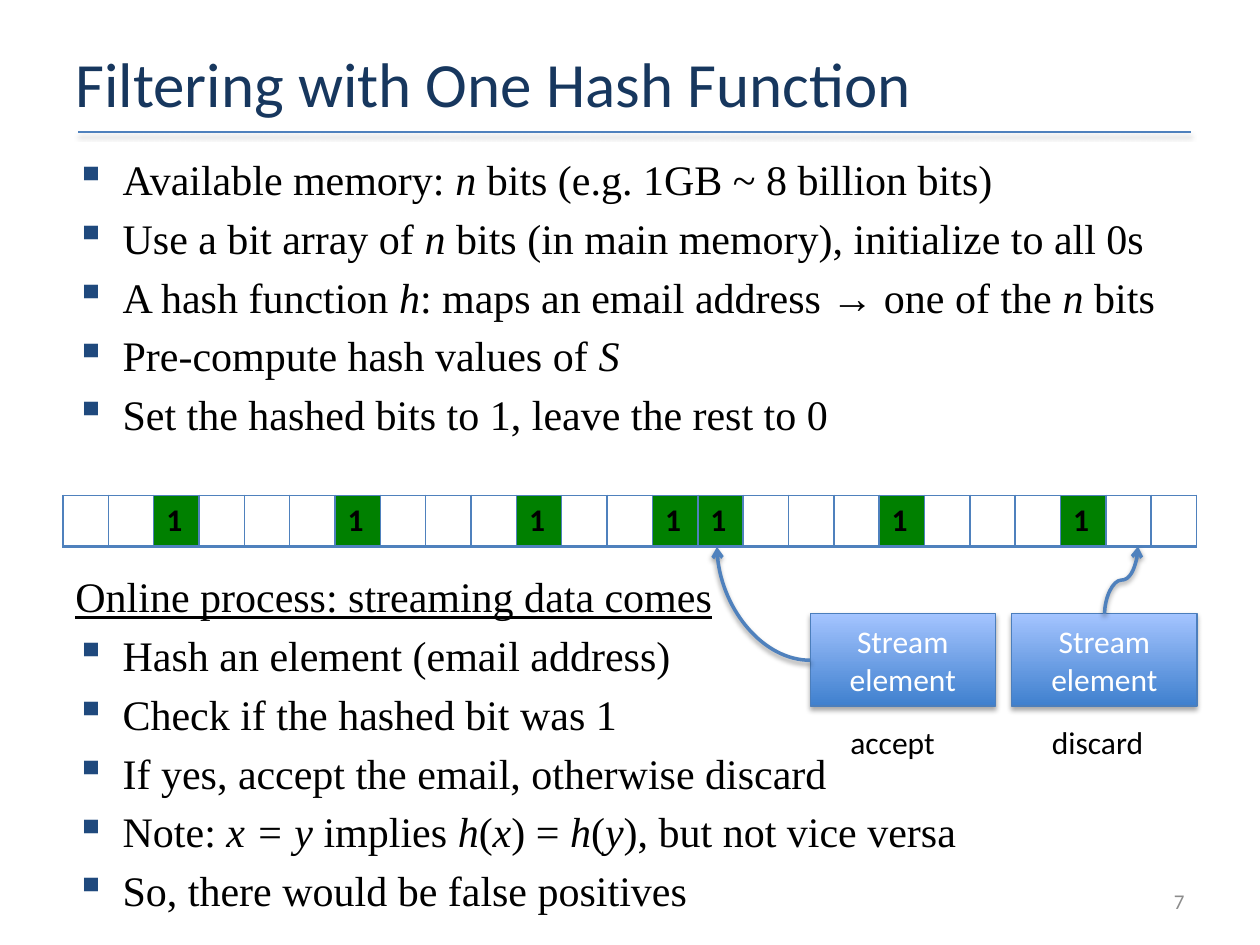
import pptx
import pptx.util
import pptx.dml.color
import pptx.enum.shapes
import pptx.enum.text
import pptx.oxml
import pptx.oxml.ns
import lxml.etree

Pt = pptx.util.Pt
qn = pptx.oxml.ns.qn
ALIGN = pptx.enum.text.PP_ALIGN
ANCHOR = pptx.enum.text.MSO_ANCHOR
CONNECTOR = pptx.enum.shapes.MSO_CONNECTOR

COLORS = {
    "title": "17375E", "text": "000000", "number": "8C8C8C", "bullet": "1F497D",
    "rule": "4F81BD", "set_bit": "008000", "label": "FFFFFF", "edge": "4B7EBC",
    "dark": "3F80CE", "light": "A4C4FF", "shadow": "000000",
}
TITLE = "Filtering with One Hash Function"
SETUP = [
    "Available memory: *n *bits (e.g. 1GB ~ 8 billion bits)",
    "Use a bit array of *n *bits (in main memory), initialize to all 0s",
    "A hash function *h*: maps an email address → one of the *n *bits",
    "Pre-compute hash values of *S*",
    "Set the hashed bits to 1, leave the rest to 0",
]
ONLINE_HEADING = "Online process: streaming data comes"
ONLINE = [
    "Hash an element (email address)",
    "Check if the hashed bit was 1",
    "If yes, accept the email, otherwise discard",
    "Note: *x = y *implies *h*(*x*) = *h*(*y*), but not vice versa",
    "So, there would be false positives",
]
BIT_COUNT = 25
SET_BITS = [2, 6, 10, 13, 14, 18, 22]
ELEMENT = "Stream element"
OUTCOMES = [("accept", 463), ("discard", 578.2)]
ARROWS = [
    ("curvedConnector2", (409.7, 312.5, 53.3, 64.8), {"rot": "10800000"}),
    ("curvedConnector3", (621.5, 322, 38.6, 19.1),
     {"rot": "5400000", "flipH": "1", "flipV": "1"}),
]

LEFT, WIDTH = 36, 648
BITS_TOP, BITS_HEIGHT = 283, 29.5
ELEMENT_TOP, ELEMENT_WIDTH, ELEMENT_HEIGHT = 350.6, 105.8, 52.8
OUTCOME_TOP, OUTCOME_INDENT, OUTCOME_WIDTH = 409.7, 15.8, 74


def rgb(name):
    return pptx.dml.color.RGBColor.from_string(COLORS[name])


def add_child(parent, tag, **attributes):
    return lxml.etree.SubElement(parent, qn(tag), attributes)


def add_color(parent, name):
    return add_child(add_child(parent, "a:solidFill"), "a:srgbClr", val=COLORS[name])


def write(frame, text, size=18, font="Calibri", color="text", align=ALIGN.LEFT,
          bold=False, underline=False, bullet=False, spaced=False):
    paragraph = frame.paragraphs[0]
    if paragraph.runs:
        paragraph = frame.add_paragraph()
    paragraph.alignment = align
    properties = paragraph._p.get_or_add_pPr()
    if spaced:
        add_child(add_child(properties, "a:spcBef"), "a:spcPct", val="20000")
    if bullet:
        properties.set("marL", str(Pt(27)))
        properties.set("indent", str(Pt(-27)))
        add_child(add_child(properties, "a:buClr"), "a:srgbClr", val=COLORS["bullet"])
        add_child(properties, "a:buChar", char="▪")
    for index, part in enumerate(text.split("*")):
        if part:
            run = paragraph.add_run()
            run.text = part
            run.font.name, run.font.size = font, Pt(size)
            run.font.color.rgb = rgb(color)
            run.font.bold, run.font.italic = bold, index % 2 == 1
            run.font.underline = underline


def add_frame(slide, left, top, width, height, anchor=ANCHOR.TOP):
    frame = slide.shapes.add_textbox(Pt(left), Pt(top), Pt(width), Pt(height)).text_frame
    frame.word_wrap = True
    frame.vertical_anchor = anchor
    return frame


def add_shadow(item, opacity, distance):
    effects = add_child(item._element.spPr, "a:effectLst")
    shadow = add_child(effects, "a:outerShdw", blurRad=str(Pt(3.1)),
                       dist=str(Pt(distance)), dir="5400000", rotWithShape="0")
    tint = add_child(shadow, "a:srgbClr", val=COLORS["shadow"])
    add_child(tint, "a:alpha", val=str(opacity * 1000))


def add_line(slide, kind, left, top, width, height, weight):
    line = slide.shapes.add_connector(
        kind, Pt(left), Pt(top), Pt(left + width), Pt(top + height))
    line.line.color.rgb = rgb("rule")
    line.line.width = Pt(weight)
    add_shadow(line, 38, 1.6)
    return line


def add_bits(slide):
    bits = slide.shapes.add_table(
        1, BIT_COUNT, Pt(LEFT), Pt(BITS_TOP), Pt(WIDTH), Pt(BITS_HEIGHT)).table
    for index, column in enumerate(bits.columns):
        column.width = Pt(WIDTH / BIT_COUNT)
        cell = bits.cell(0, index)
        properties = cell._tc.get_or_add_tcPr()
        for side, weight in (("L", 1), ("R", 1), ("T", 1), ("B", 2)):
            add_color(add_child(properties, "a:ln" + side, w=str(Pt(weight))), "rule")
        if index in SET_BITS:
            write(cell.text_frame, "1", bold=True)
            cell.fill.solid()
            cell.fill.fore_color.rgb = rgb("set_bit")
        else:
            cell.fill.background()


def add_element(slide, left):
    element = slide.shapes.add_shape(
        pptx.enum.shapes.MSO_SHAPE.RECTANGLE, Pt(left), Pt(ELEMENT_TOP),
        Pt(ELEMENT_WIDTH), Pt(ELEMENT_HEIGHT))
    element.fill.gradient()
    element.fill.gradient_angle = 90
    for stop, name in zip(element.fill.gradient_stops, ("dark", "light")):
        stop.color.rgb = rgb(name)
    element.line.color.rgb = rgb("edge")
    element.line.width = Pt(0.75)
    add_shadow(element, 35, 1.8)
    element.text_frame.vertical_anchor = ANCHOR.MIDDLE
    write(element.text_frame, ELEMENT, color="label", align=ALIGN.CENTER)


def main():
    deck = pptx.Presentation()
    deck.slide_width, deck.slide_height = Pt(720), Pt(540)
    slide = deck.slides.add_slide(deck.slide_layouts[6])
    body = {"size": 24, "font": "Times New Roman", "spaced": True}

    add_line(slide, CONNECTOR.STRAIGHT, 44.6, 75.6, 635.8, 0, 1)
    write(add_frame(slide, LEFT, 21.6, WIDTH, 51, ANCHOR.MIDDLE), TITLE,
          size=36, color="title")
    add_bits(slide)
    write(add_frame(slide, 516, 500.5, 168, 28.8, ANCHOR.MIDDLE), "7",
          size=12, color="number", align=ALIGN.RIGHT)

    setup = add_frame(slide, LEFT, 84.2, WIDTH, 162)
    for point in SETUP:
        write(setup, point, bullet=True, **body)
    online = add_frame(slide, LEFT, 322.6, WIDTH, 217.4)
    write(online, ONLINE_HEADING, underline=True, **body)
    for point in ONLINE:
        write(online, point, bullet=True, **body)

    for outcome, left in OUTCOMES:
        add_element(slide, left)
        write(add_frame(slide, left + OUTCOME_INDENT, OUTCOME_TOP, OUTCOME_WIDTH, 28.8),
              outcome)
    for preset, box, turn in ARROWS:
        arrow = add_line(slide, CONNECTOR.CURVE, *box, 2)
        properties = arrow._element.spPr
        properties.find(qn("a:prstGeom")).set("prst", preset)
        for key, value in turn.items():
            properties.find(qn("a:xfrm")).set(key, value)
        add_child(properties.find(qn("a:ln")), "a:tailEnd", type="arrow")

    deck.save("out.pptx")


if __name__ == "__main__":
    main()
